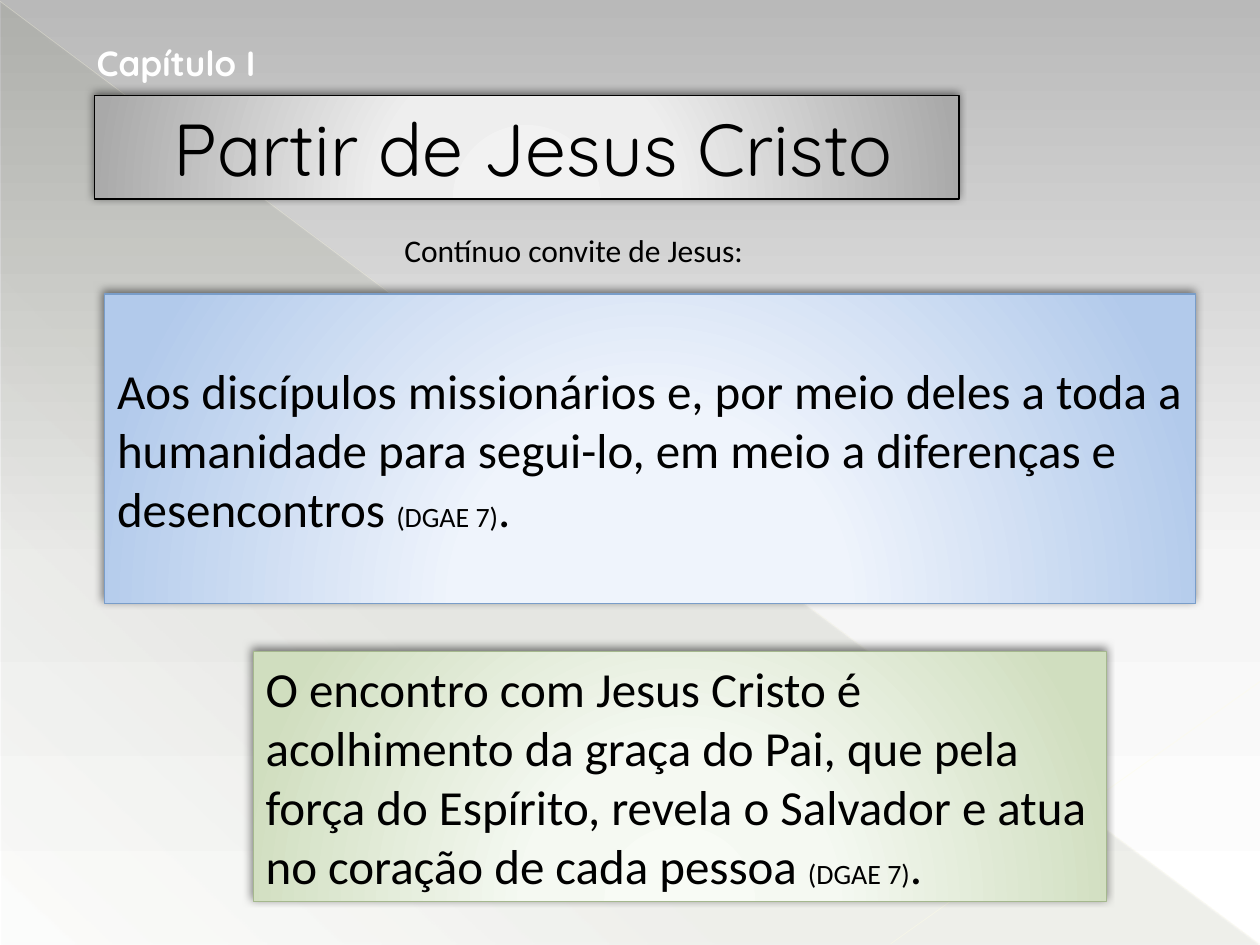
from lxml.etree import SubElement
from pptx import Presentation
from pptx.dml.color import RGBColor
from pptx.enum.shapes import MSO_CONNECTOR, MSO_SHAPE
from pptx.enum.text import MSO_ANCHOR, MSO_AUTO_SIZE, PP_ALIGN
from pptx.oxml.ns import qn
from pptx.util import Pt

THEME = {
    "heading": "Quicksand", "body": "Calibri",
    "title_size": 42, "chapter_size": 20, "quote_size": 28, "intro_size": 18, "source_size": 16,
    "text": "000000", "chapter": "FFFFFF", "shadow": "000000",
    "background": [(0, "B9B9B9", 100), (60, "F6F6F6", 100), (100, "FFFFFF", 100)],
    "triangle": [(0, "444D26", 10), (70, "444D26", 8), (100, "444D26", 1)],
    "gray": [(0, "F2F2F2", 100), (34, "EEEEEE", 100), (100, "A9A9A9", 100)],
    "blue": [(0, "F2F7FE", 100), (34, "EFF4FC", 100), (100, "B2CAEB", 100)],
    "green": [(0, "F8FBF5", 100), (34, "F5F9F2", 100), (100, "D0DEBF", 100)],
    "gray_line": "000000", "blue_line": "799DC9", "green_line": "A5B88E",
}


def set_gradient(owner, stops, angle=None):
    """Gradient fill: linear at the angle in degrees, or circular from the bottom centre without one."""
    fill = owner.background.fill if hasattr(owner, "background") else owner.fill
    fill.solid()
    fill.fore_color.rgb = RGBColor(0, 0, 0)
    solid = owner.element.find(".//" + qn("a:solidFill"))
    grad = solid.makeelement(qn("a:gradFill"), {"rotWithShape": "1"})
    solid.getparent().replace(solid, grad)
    gs_list = SubElement(grad, qn("a:gsLst"))
    for pos, color, alpha in stops:
        gs = SubElement(gs_list, qn("a:gs"), pos=str(pos * 1000))
        clr = SubElement(gs, qn("a:srgbClr"), val=color)
        if alpha < 100:
            SubElement(clr, qn("a:alpha"), val=str(alpha * 1000))
    if angle is None:
        circle = SubElement(grad, qn("a:path"), {"path": "circle"})
        SubElement(circle, qn("a:fillToRect"), l="50000", t="155000", r="50000", b="-55000")
    else:
        SubElement(grad, qn("a:lin"), ang=str(angle * 60000), scaled="0")


def add_run(p, text, size, font, color, bold=False):
    r = p.add_run()
    r.text = text
    r.font.size, r.font.name, r.font.bold = Pt(size), font, bold
    r.font.color.rgb = RGBColor.from_string(color)


prs = Presentation()
prs.slide_width, prs.slide_height = Pt(720), Pt(540)
s = prs.slides.add_slide(prs.slide_layouts[5])
set_gradient(s, THEME["background"], 90)

# Background decoration
triangle = s.shapes.add_shape(MSO_SHAPE.RIGHT_TRIANGLE, Pt(0.7), Pt(1.4), Pt(719), Pt(538.6))
triangle.shadow.inherit = False
set_gradient(triangle, THEME["triangle"], 133)
triangle.line.fill.background()

for x1, y1, x2, y2, color, width, alpha in [
    (0, 0.7, 719.3, 539.3, "FFFDE3", 0.39, 35),
    (720, 389.5, 509, 539.3, "FFFDE6", 0.47, 45),
]:
    line = s.shapes.add_connector(MSO_CONNECTOR.STRAIGHT, Pt(x1), Pt(y1), Pt(x2), Pt(y2))
    line.line.width = Pt(width)
    line.line.color.rgb = RGBColor.from_string(color)
    clr = line.element.spPr.find(".//" + qn("a:srgbClr"))
    SubElement(clr, qn("a:alpha"), val=str(alpha * 1000))
    SubElement(line.element.spPr, qn("a:effectLst"))

# Title, brought in front of the decoration
title = s.shapes.title
s.shapes.element.append(title.element)
title.left, title.top, title.width, title.height = Pt(54), Pt(54.7), Pt(494), Pt(59)
title.text_frame.auto_size = MSO_AUTO_SIZE.NONE
p = title.text_frame.paragraphs[0]
p.alignment = PP_ALIGN.LEFT
p._p.get_or_add_pPr().set("marL", str(Pt(38)))
add_run(p, "Partir de Jesus Cristo", THEME["title_size"], THEME["heading"], THEME["text"])

# Chapter label and introduction
for text, x, y, w, h, size, font, color, bold in [
    ("Capítulo I", 48.2, 20.2, 136, 31.5, THEME["chapter_size"], THEME["heading"], THEME["chapter"], True),
    ("Contínuo convite de Jesus:", 224, 128.2, 335, 29, THEME["intro_size"], THEME["body"], THEME["text"], False),
]:
    tf = s.shapes.add_textbox(Pt(x), Pt(y), Pt(w), Pt(h)).text_frame
    tf.word_wrap = True
    add_run(tf.paragraphs[0], text, size, font, color, bold)

# Quotations
quotes = []
for text, x, y, w, h in [
    ("Aos discípulos missionários e, por meio deles a toda a humanidade para segui-lo, "
     "em meio a diferenças e desencontros ", 59.8, 168, 623.5, 177),
    ("O encontro com Jesus Cristo é acolhimento da graça do Pai, que pela força do Espírito, "
     "revela o Salvador e atua no coração de cada pessoa ", 144.7, 372.2, 487.5, 143),
]:
    sp = s.shapes.add_shape(MSO_SHAPE.RECTANGLE, Pt(x), Pt(y), Pt(w), Pt(h))
    quotes.append(sp)
    tf = sp.text_frame
    tf.word_wrap = True
    tf.vertical_anchor = MSO_ANCHOR.MIDDLE
    p = tf.paragraphs[0]
    p.alignment = PP_ALIGN.LEFT
    for part, size in [(text, "quote_size"), ("(DGAE 7)", "source_size"), (".", "quote_size")]:
        add_run(p, part, THEME[size], THEME["body"], THEME["text"])

# Shared panel look: circular gradient, thin outline, soft shadow
for panel, color in zip([title, *quotes], ["gray", "blue", "green"]):
    panel.text_frame.vertical_anchor = MSO_ANCHOR.MIDDLE
    set_gradient(panel, THEME[color])
    panel.line.color.rgb = RGBColor.from_string(THEME[color + "_line"])
    panel.line.width = Pt(0.75)
    effects = SubElement(panel.element.spPr, qn("a:effectLst"))
    shadow = SubElement(effects, qn("a:outerShdw"), blurRad=str(Pt(5)), dist=str(Pt(2)),
                        dir=str(245 * 60000), algn="tl", rotWithShape="0")
    clr = SubElement(shadow, qn("a:srgbClr"), val=THEME["shadow"])
    SubElement(clr, qn("a:alpha"), val="50000")

prs.save("out.pptx")
